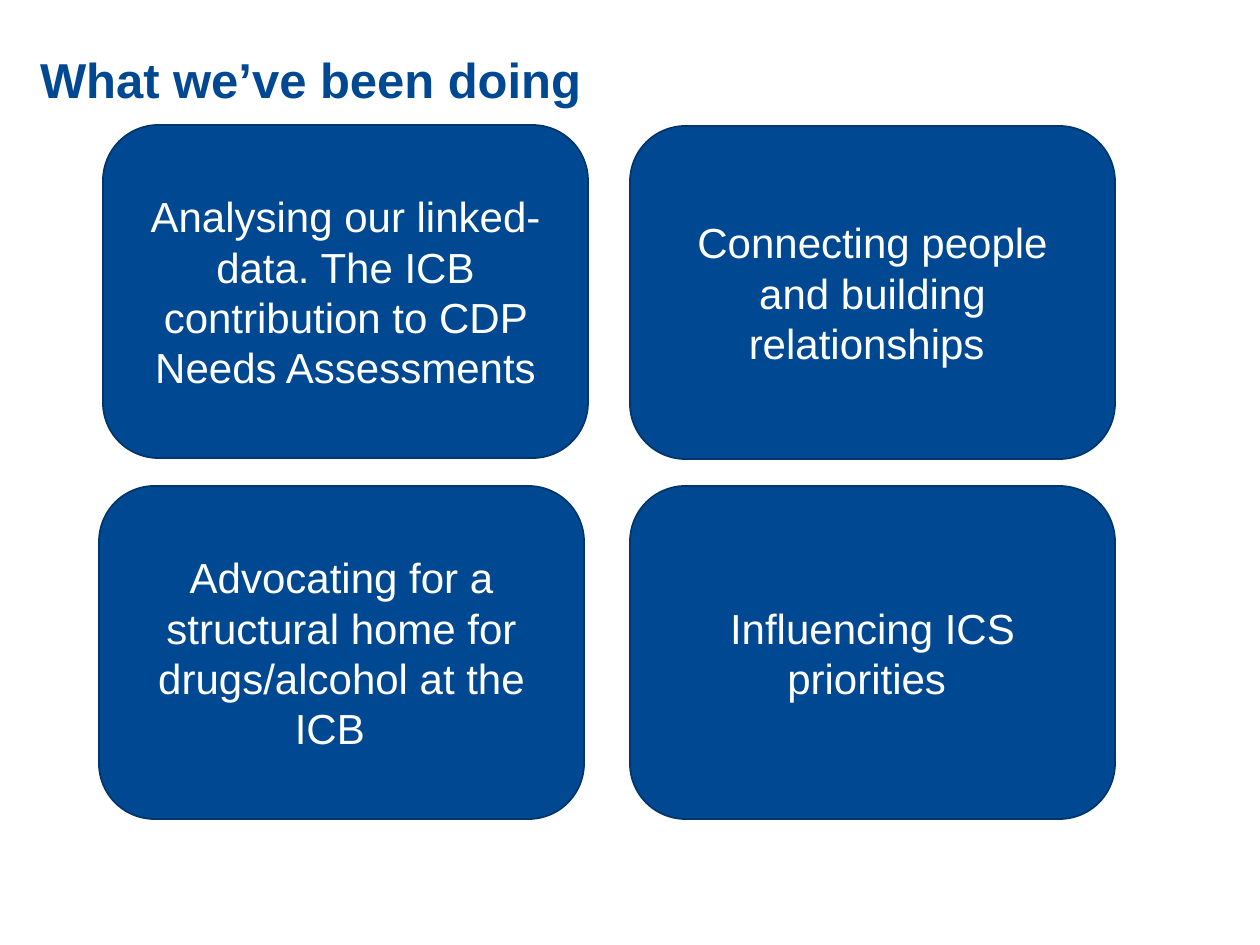
from pptx import Presentation
from pptx.dml.color import RGBColor
from pptx.enum.shapes import MSO_SHAPE
from pptx.enum.text import MSO_ANCHOR, PP_ALIGN
from pptx.util import Emu, Pt

ROUNDED = MSO_SHAPE.ROUNDED_RECTANGLE
MIDDLE = MSO_ANCHOR.MIDDLE
CENTER = PP_ALIGN.CENTER

# Content: each activity with the left and top of its card, in px
TITLE = "What we’ve been doing"
ACTIVITIES = [
    ("Analysing our linked-data. The ICB contribution to CDP Needs Assessments", 103, 125),
    ("Connecting people and building relationships ", 630, 126),
    ("Advocating for a structural home for drugs/alcohol at the ICB  ", 99, 486),
    ("Influencing ICS priorities ", 630, 486),
]

FONT = "Arial"
BLUE, DARK_BLUE, WHITE = "004992", "00366C", "FFFFFF"
CARD_WIDTH, CARD_HEIGHT = 485, 333
PX_PER_INCH = 126


def px(length):
    return Emu(round(length * 914400 / PX_PER_INCH))


def color(hex_string):
    return RGBColor.from_string(hex_string)


def style(paragraph, size, hex_string, bold=False):
    for run in paragraph.runs:
        run.font.name = FONT
        run.font.size = Pt(size)
        run.font.bold = bold
        run.font.color.rgb = color(hex_string)


def add_title(slide):
    title = slide.shapes.add_textbox(px(10), px(50), px(1216), px(142))
    frame = title.text_frame
    frame.word_wrap = True
    frame.margin_left = frame.margin_right = px(30)
    frame.margin_top = frame.margin_bottom = px(6)
    frame.text = TITLE
    frame.paragraphs[0].line_spacing = 0.9
    style(frame.paragraphs[0], 28, BLUE, bold=True)


def add_card(slide, activity, left, top):
    card = slide.shapes.add_shape(ROUNDED, px(left), px(top), px(CARD_WIDTH), px(CARD_HEIGHT))
    card.shadow.inherit = False
    card.fill.solid()
    card.fill.fore_color.rgb = color(BLUE)
    card.line.color.rgb = color(DARK_BLUE)
    card.line.width = Pt(1)
    frame = card.text_frame
    frame.word_wrap = True
    frame.vertical_anchor = MIDDLE
    frame.text = activity
    frame.paragraphs[0].alignment = CENTER
    style(frame.paragraphs[0], 24, WHITE)


def main():
    deck = Presentation()
    deck.slide_width, deck.slide_height = px(1260), px(945)
    slide = deck.slides.add_slide(deck.slide_layouts[6])
    add_title(slide)
    for activity, left, top in ACTIVITIES:
        add_card(slide, activity, left, top)
    deck.save("out.pptx")


if __name__ == "__main__":
    main()
